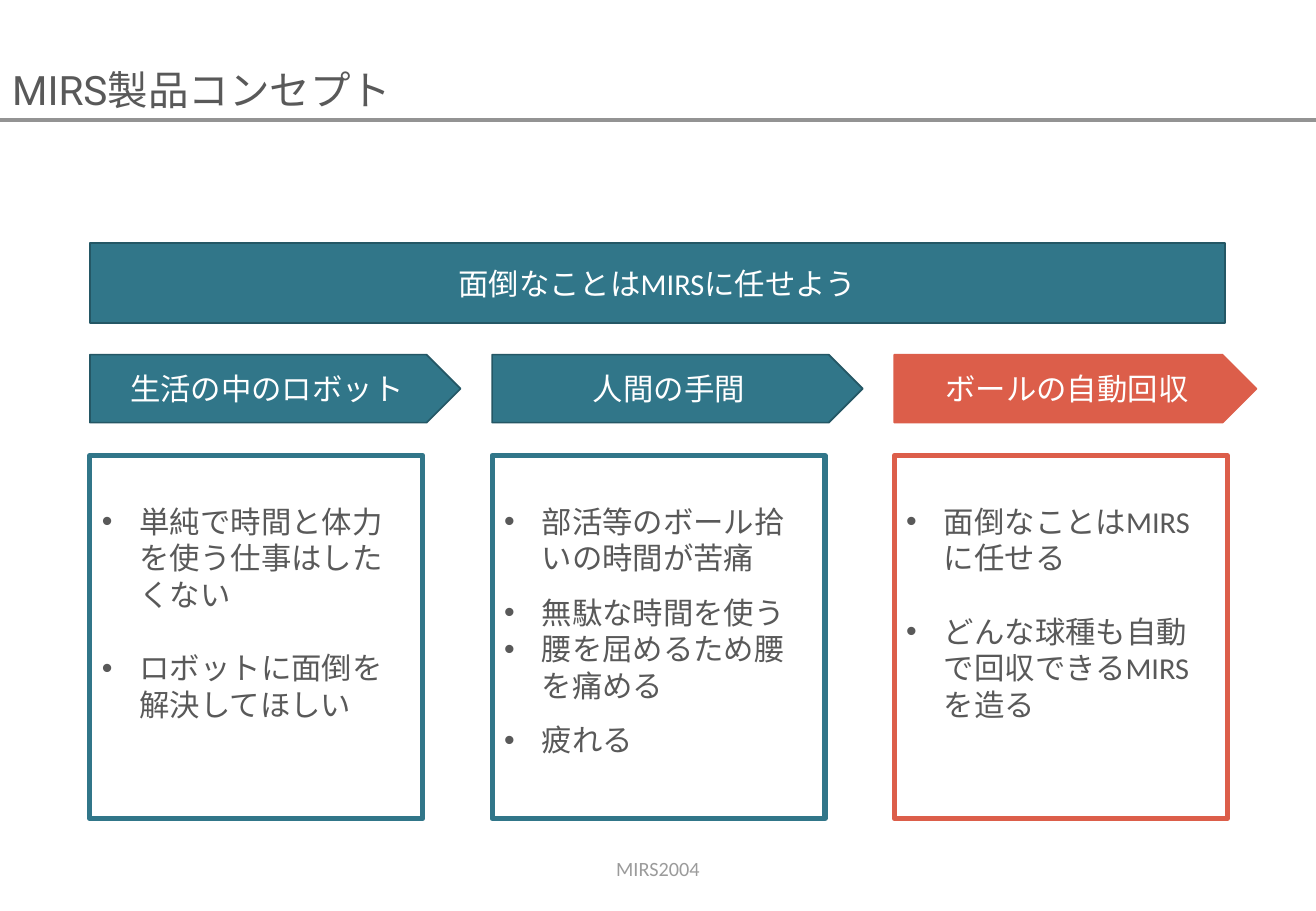
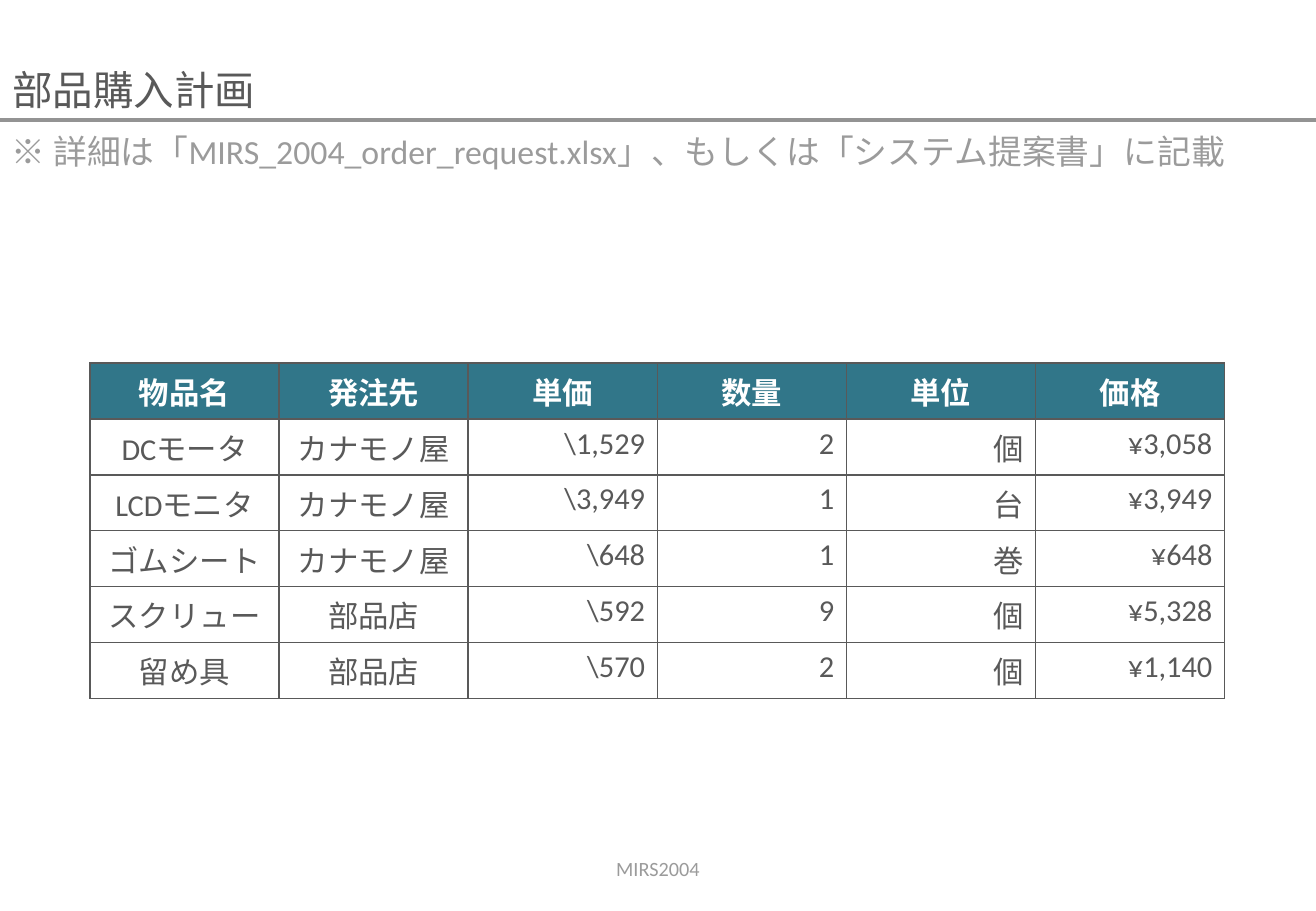
from dataclasses import dataclass
from typing import Optional

from lxml import etree
from pptx import Presentation
from pptx.dml.color import RGBColor
from pptx.enum.shapes import MSO_CONNECTOR as CONN, MSO_SHAPE as SHAPE
from pptx.enum.text import MSO_ANCHOR as ANCHOR, MSO_AUTO_SIZE as FIT, PP_ALIGN as ALIGN
from pptx.oxml.ns import qn
from pptx.util import Inches, Pt

# Theme
TEAL, TEAL_EDGE, CORAL = "317689", "245765", "DC5E4A"
INK, MUTED, RULE, WHITE = "595959", "9B9B9B", "939393", "FFFFFF"
BODY_FONT, TITLE_FONT = "Calibri", "Roboto"

# Grid in inches
SLIDE_W, SLIDE_H = 10.83, 7.5
TITLE_H = 0.99
LEFT, CONTENT_W = 0.74, 9.34
COL_STEP, COL_W = 3.31, 2.74
BANNER_Y, ARROW_Y, BOX_Y, TABLE_Y = 2, 2.92, 3.75, 2.99
TABLE_ROW_H = 0.46
HANG = 0.31


@dataclass
class Box:
    x: float
    y: float
    w: float
    h: float

    def emu(self) -> tuple:
        return tuple(Inches(v) for v in (self.x, self.y, self.w, self.h))


@dataclass
class Bullet:
    text: str
    before: float = 0
    spacing: Optional[float] = None


@dataclass
class Column:
    heading: str
    bullets: list
    color: str = TEAL
    edge: str = TEAL_EDGE
    arrow_w: float = 3.05


COLUMNS = [
    Column("生活の中のロボット", [
        Bullet("単純で時間と体力を使う仕事はしたくない"),
        Bullet("ロボットに面倒を解決してほしい", before=22)]),
    Column("人間の手間", [
        Bullet("部活等のボール拾いの時間が苦痛"),
        Bullet("無駄な時間を使う", spacing=1.5),
        Bullet("腰を屈めるため腰を痛める"),
        Bullet("疲れる", spacing=1.5)]),
    Column("ボールの自動回収", [
        Bullet("面倒なことはMIRSに任せる"),
        Bullet("どんな球種も自動で回収できるMIRSを造る", before=22)],
        CORAL, CORAL, 2.98),
]

PARTS = [
    ("物品名", "発注先", "単価", "数量", "単位", "価格"),
    ("DCモータ", "カナモノ屋", r"\1,529", "2", "個", "¥3,058"),
    ("LCDモニタ", "カナモノ屋", r"\3,949", "1", "台", "¥3,949"),
    ("ゴムシート", "カナモノ屋", r"\648", "1", "巻", "¥648"),
    ("スクリュー", "部品店", r"\592", "9", "個", "¥5,328"),
    ("留め具", "部品店", r"\570", "2", "個", "¥1,140"),
]


def rgb(color: str) -> RGBColor:
    return RGBColor.from_string(color)


def add_run(p, text: str, size: float, color: str, font: str = BODY_FONT,
            bold: bool = False) -> None:
    r = p.add_run()
    r.text = text
    r.font.size, r.font.name, r.font.bold = Pt(size), font, bold
    r.font.color.rgb = rgb(color)


def add_text(s, box: Box, text: str, size: float, anchor, align) -> None:
    tf = s.shapes.add_textbox(*box.emu()).text_frame
    tf.word_wrap, tf.vertical_anchor = True, anchor
    p = tf.paragraphs[0]
    p.alignment = align
    add_run(p, text, size, MUTED)


def add_panel(s, kind, box: Box, fill: str, line: str, line_w: float):
    sp = s.shapes.add_shape(kind, *box.emu())
    sp.shadow.inherit = False
    sp.fill.solid()
    sp.fill.fore_color.rgb = rgb(fill)
    sp.line.color.rgb = rgb(line)
    sp.line.width = Pt(line_w)
    sp.text_frame.word_wrap = True
    return sp


def add_label(s, kind, box: Box, text: str, fill: str, line: str) -> None:
    tf = add_panel(s, kind, box, fill, line, 1).text_frame
    tf.vertical_anchor = ANCHOR.MIDDLE
    p = tf.paragraphs[0]
    p.alignment = ALIGN.CENTER
    add_run(p, text, 18, WHITE)


def add_bullets(tf, bullets: list) -> None:
    tf.vertical_anchor = ANCHOR.TOP
    tf.margin_top = Inches(0.39)
    for i, bullet in enumerate(bullets):
        p = tf.add_paragraph() if i else tf.paragraphs[0]
        pPr = p._p.get_or_add_pPr()
        pPr.set("marL", str(Inches(HANG)))
        pPr.set("indent", str(-Inches(HANG)))
        etree.SubElement(pPr, qn("a:buFont")).set("typeface", "Arial")
        etree.SubElement(pPr, qn("a:buChar")).set("char", "•")
        p.alignment = ALIGN.LEFT
        if bullet.before:
            p.space_before = Pt(bullet.before)
        if bullet.spacing:
            p.line_spacing = bullet.spacing
        add_run(p, bullet.text, 18, INK)


def set_borders(cell, color: str, width: float) -> None:
    tcPr = cell._tc.get_or_add_tcPr()
    for i, side in enumerate(("lnL", "lnR", "lnT", "lnB")):
        ln = etree.Element(qn(f"a:{side}"), w=str(Pt(width)))
        fill = etree.SubElement(ln, qn("a:solidFill"))
        etree.SubElement(fill, qn("a:srgbClr")).set("val", color)
        tcPr.insert(i, ln)


def add_slide(prs, title: str):
    """Add a slide with the shared title, rule and footer."""
    s = prs.slides.add_slide(prs.slide_layouts[5])
    rule = s.shapes.add_connector(
        CONN.STRAIGHT, 0, Inches(TITLE_H), Inches(SLIDE_W), Inches(TITLE_H))
    rule.line.color.rgb = rgb(RULE)
    rule.line.width = Pt(2.25)
    etree.SubElement(rule._element.spPr, qn("a:effectLst"))

    sp = s.shapes.title
    sp.left, sp.top, sp.width, sp.height = Box(0, 0, SLIDE_W, TITLE_H).emu()
    tf = sp.text_frame
    tf.auto_size, tf.vertical_anchor = FIT.NONE, ANCHOR.BOTTOM
    p = tf.paragraphs[0]
    p.alignment, p.line_spacing = ALIGN.LEFT, 0.9
    add_run(p, title, 24, INK, TITLE_FONT)

    footer_w = 3.66
    add_text(s, Box((SLIDE_W - footer_w) / 2, 6.95, footer_w, 0.4),
             "MIRS2004", 12, ANCHOR.MIDDLE, ALIGN.CENTER)
    return s


def concept_slide(prs) -> None:
    s = add_slide(prs, "MIRS製品コンセプト")
    add_label(s, SHAPE.RECTANGLE, Box(LEFT, BANNER_Y, CONTENT_W, 0.66),
              "面倒なことはMIRSに任せよう", TEAL, TEAL_EDGE)
    for i, col in enumerate(COLUMNS):
        x = LEFT + i * COL_STEP
        add_label(s, SHAPE.PENTAGON, Box(x, ARROW_Y, col.arrow_w, 0.56),
                  col.heading, col.color, col.edge)
        panel = add_panel(s, SHAPE.RECTANGLE, Box(x, BOX_Y, COL_W, 2.99),
                          WHITE, col.color, 3)
        add_bullets(panel.text_frame, col.bullets)


def parts_slide(prs) -> None:
    s = add_slide(prs, "部品購入計画")
    add_text(s, Box(0, TITLE_H, SLIDE_W, 0.47),
             "※ 詳細は「MIRS_2004_order_request.xlsx」、もしくは「システム提案書」に記載",
             20, ANCHOR.BOTTOM, ALIGN.LEFT)

    # Parts table
    rows, cols = len(PARTS), len(PARTS[0])
    box = Box(LEFT, TABLE_Y, CONTENT_W, rows * TABLE_ROW_H)
    table = s.shapes.add_table(rows, cols, *box.emu()).table
    table.horz_banding = False
    for i, part in enumerate(PARTS):
        head = i == 0
        for j, text in enumerate(part):
            cell = table.cell(i, j)
            cell.fill.solid()
            cell.fill.fore_color.rgb = rgb(TEAL if head else WHITE)
            set_borders(cell, INK, 1)
            p = cell.text_frame.paragraphs[0]
            p.alignment = ALIGN.CENTER if head or j < 2 else ALIGN.RIGHT
            add_run(p, text, 18, WHITE if head else INK, bold=head)


def main() -> None:
    prs = Presentation()
    prs.slide_width, prs.slide_height = Inches(SLIDE_W), Inches(SLIDE_H)
    concept_slide(prs)
    parts_slide(prs)
    prs.save("out.pptx")


if __name__ == "__main__":
    main()
